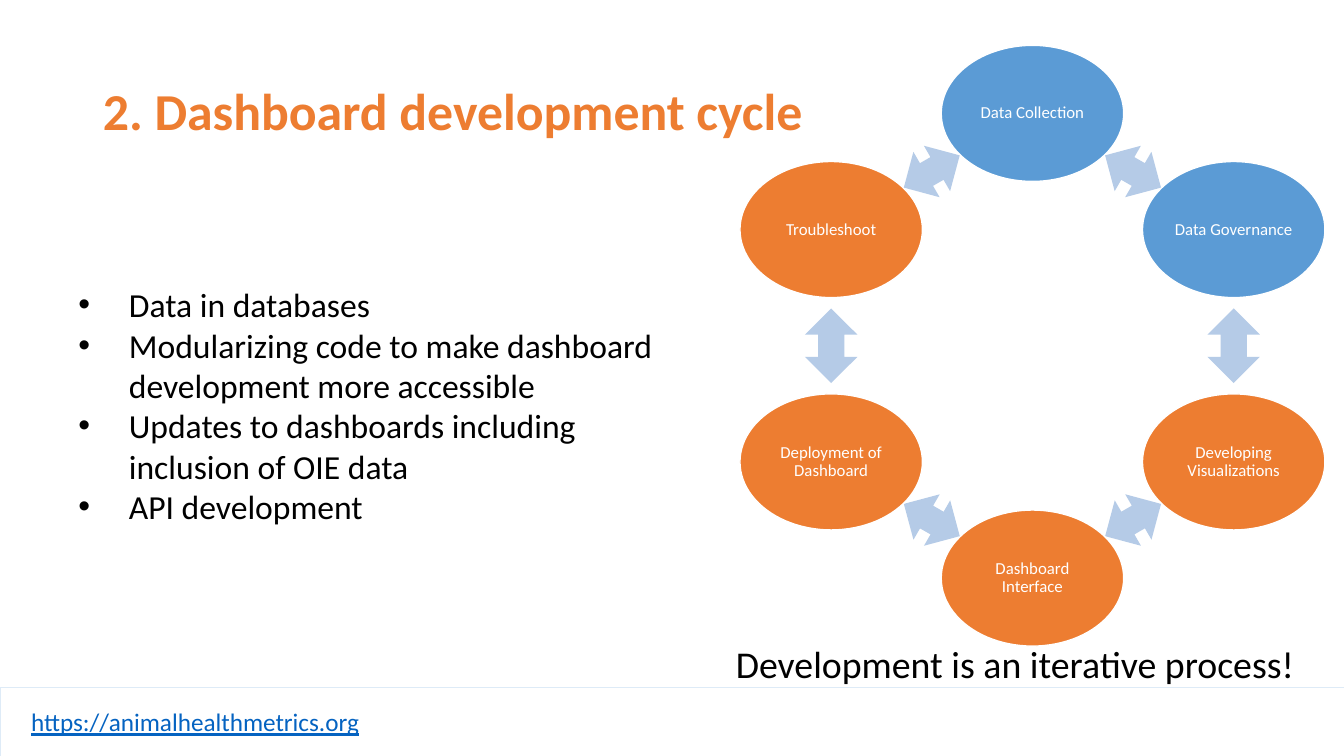
import math
from lxml import etree
from pptx import Presentation
from pptx import util as u
from pptx.dml.color import RGBColor
from pptx.enum import shapes, text
from pptx.oxml.ns import qn

WIDE, HIGH = 13.33, 7.5
ORANGE, BLUE, PALE = "ED7D31", "5B9BD5", "B5CBE7"
STEPS = [
    ("Data Collection", BLUE),
    ("Data Governance", BLUE),
    ("Developing Visualizations", ORANGE),
    ("Dashboard Interface", ORANGE),
    ("Deployment of Dashboard", ORANGE),
    ("Troubleshoot", ORANGE),
]
POINTS = [
    "Data in databases",
    "Modularizing code to make dashboard development more accessible",
    "Updates to dashboards including inclusion of OIE data",
    "API development",
]


def tint(value):
    return RGBColor.from_string(value)


def inches(box):
    return [u.Inches(v) for v in box]


def write(frame, lines, size, color, para=None, bullet=False, **look):
    """Fill a text frame, one paragraph per line."""
    frame.word_wrap = True
    for i, line in enumerate(lines):
        p = frame.add_paragraph() if i else frame.paragraphs[0]
        if bullet:
            props = p._p.get_or_add_pPr()
            props.set("marL", str(u.Inches(0.5)))
            props.set("indent", str(-u.Inches(0.5)))
            etree.SubElement(props, qn("a:buFont")).set("typeface", "Arial")
            etree.SubElement(props, qn("a:buChar")).set("char", "•")
        for key, value in (para or {}).items():
            setattr(p, key, value)
        run = p.add_run()
        run.text = line
        run.font.color.rgb = tint(color)
        style = {"name": "Calibri", "size": u.Pt(size), **look}
        for key, value in style.items():
            setattr(run.font, key, value)


def label(slide, box, lines, size, color="000000", **look):
    frame = slide.shapes.add_textbox(*inches(box)).text_frame
    write(frame, lines, size, color, **look)


def shape(slide, kind, center, size, fill=None, line=None, width=1):
    """Add a preset shape around its center."""
    (x, y), (w, h) = center, size
    item = slide.shapes.add_shape(kind, *inches((x - w / 2, y - h / 2, w, h)))
    item.shadow.inherit = False
    if fill:
        item.fill.solid()
        item.fill.fore_color.rgb = tint(fill)
    else:
        item.fill.background()
    if line:
        item.line.color.rgb = tint(line)
        item.line.width = u.Pt(width)
    else:
        item.line.fill.background()
    return item


def heading(slide, box, words):
    title = slide.shapes.title
    for key, value in zip(("left", "top", "width", "height"), inches(box)):
        setattr(title, key, value)
    frame = title.text_frame
    frame.vertical_anchor = text.MSO_ANCHOR.MIDDLE
    frame.auto_size = text.MSO_AUTO_SIZE.NONE
    para = {"alignment": text.PP_ALIGN.LEFT, "line_spacing": 0.9}
    write(frame, [words], 37, ORANGE, para, bold=True)


def footer(slide, box, link):
    x, y, w, h = box
    shape(slide, shapes.MSO_SHAPE.RECTANGLE, (x + w / 2, y + h / 2), (w, h),
          line="DEEBF7", width=0.5)
    label(slide, (x + 0.21, y + 0.14, 3.74, 0.42), [link], 18, "0563C1",
          underline=True)


def cycle(slide, box):
    """Ring of steps, clockwise from the top, with arrows between them."""
    x, y, w, h = box
    oval = (1.81, 1.35)
    radius = (h - oval[1]) / 2
    center = (x + w / 2, y + h / 2)
    turn = 360 / len(STEPS)

    def spot(angle, reach):
        a = math.radians(angle)
        return (center[0] + reach * math.sin(a),
                center[1] - reach * math.cos(a))

    para = {"alignment": text.PP_ALIGN.CENTER, "line_spacing": 0.9}
    for i, (name, fill) in enumerate(STEPS):
        step = shape(slide, shapes.MSO_SHAPE.OVAL, spot(i * turn, radius),
                     oval, fill, "FFFFFF")
        frame = step.text_frame
        for side in ("left", "right", "top", "bottom"):
            setattr(frame, "margin_" + side, u.Inches(0.02))
        frame.vertical_anchor = text.MSO_ANCHOR.MIDDLE
        write(frame, [name], 12, "FFFFFF", para)

        angle = (i + 0.5) * turn
        upright = i % 3 == 1
        arrow = shape(slide, shapes.MSO_SHAPE.LEFT_RIGHT_ARROW,
                      spot(angle, radius * math.cos(math.radians(turn / 2))),
                      (0.74 if upright else 0.64, 0.52), PALE)
        arrow.rotation = angle


def main():
    deck = Presentation()
    deck.slide_width, deck.slide_height = inches((WIDE, HIGH))
    slide = deck.slides.add_slide(deck.slide_layouts[5])
    footer(slide, (0, 6.82, WIDE, 0.68), "https://animalhealthmetrics.org")
    heading(slide, (0.92, 0.4, 11.5, 1.45), "2. Dashboard development cycle")
    cycle(slide, (7.34, 0.45, 5.8, 5.96))
    label(slide, (0.68, 2.77, 5.98, 2.5), POINTS, 24, bullet=True)
    label(slide, (7.2, 6.31, 5.98, 0.56),
          ["Development is an iterative process!"], 27)
    deck.save("out.pptx")


if __name__ == "__main__":
    main()
